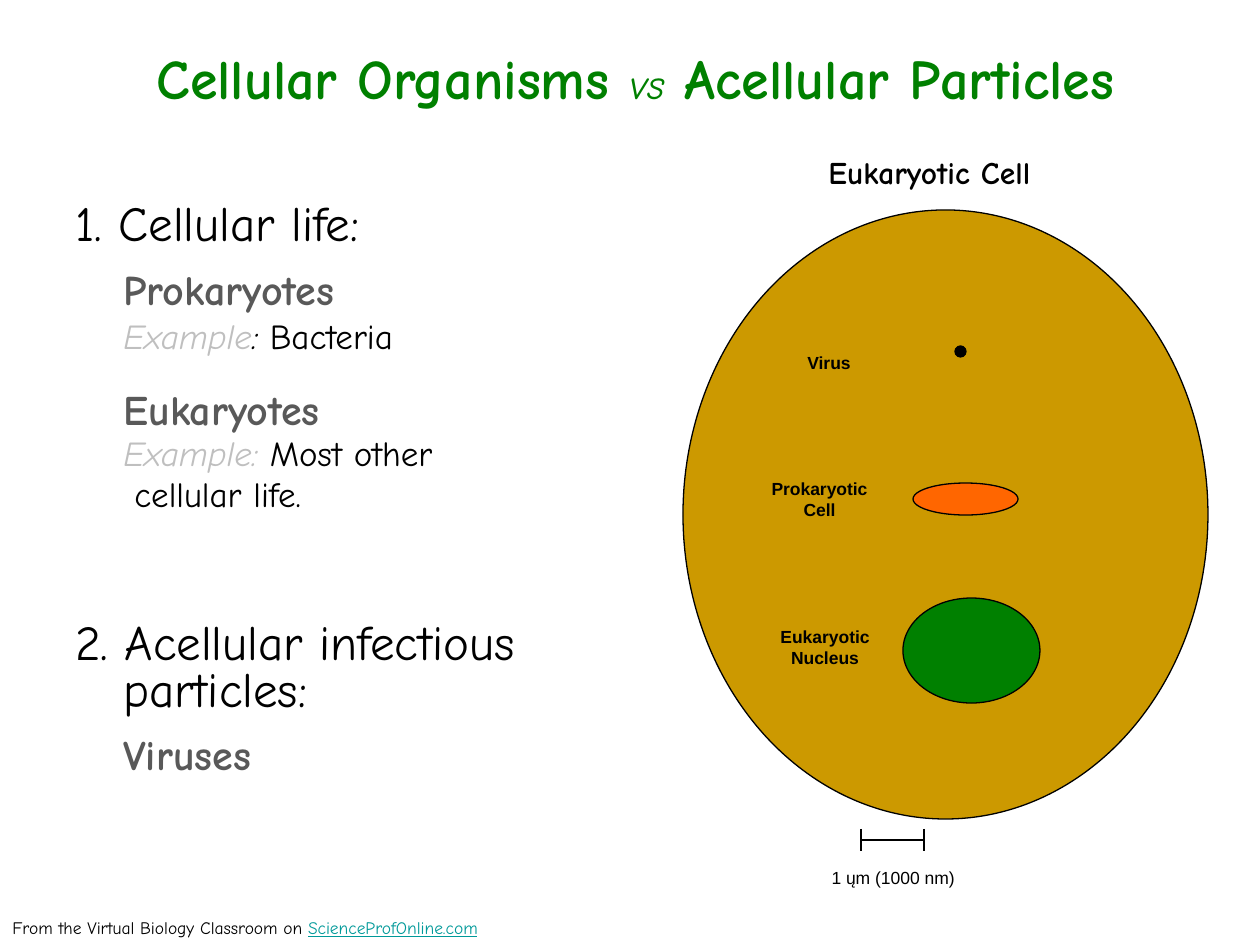
from lxml.etree import SubElement
from pptx import Presentation
from pptx.dml.color import RGBColor
from pptx.enum.shapes import MSO_CONNECTOR, MSO_SHAPE
from pptx.enum.text import MSO_ANCHOR, PP_ALIGN
from pptx.oxml.ns import qn
from pptx.util import Inches, Pt

PX = Inches(1) / 126
BLACK = RGBColor(0, 0, 0)
GREEN = RGBColor(0, 128, 0)
GOLD = RGBColor(204, 153, 0)
ORANGE = RGBColor(255, 102, 0)
GREY = RGBColor(89, 89, 89)
SILVER = RGBColor(191, 191, 191)
TEAL = RGBColor(0, 153, 153)
COMIC, ARIAL = "Comic Neue", "Arial"

HEADING = dict(size=28)
KIND = dict(size=24, bold=True, color=GREY)
EXAMPLE = dict(size=20, italic=True, color=SILVER)
PLAIN = dict(size=20)

TITLE = [
    ("Cellular Organisms ", dict(size=32, bold=True, color=GREEN)),
    ("vs", dict(size=24, italic=True, color=GREEN)),
    (" Acellular Particles", dict(size=32, bold=True, color=GREEN)),
]
# Each outline row: space before in points, left indent, first-line indent, spans
OUTLINE = [
    (0, 48, -48, [("1. Cellular life:", HEADING)]),
    (12.5, 48, 0, [("Prokaryotes", KIND)]),
    (5, 48, 0, [("Example", EXAMPLE), (": ", dict(size=20, italic=True)), ("Bacteria", PLAIN)]),
    (21.5, 48, 0, [("Eukaryotes", KIND)]),
    (3.5, 48, 0, [("Example: ", EXAMPLE), ("Most other", PLAIN)]),
    (4, 59, 0, [("cellular life.", PLAIN)]),
    (62, 48, -48, [("2. Acellular infectious particles:", HEADING)]),
    (12.5, 48, 0, [("Viruses", KIND)]),
]
CELL_PARTS = [
    ((683, 210, 525, 609), GOLD),
    ((903, 598, 137, 105), GREEN),
    ((913, 483, 105, 32), ORANGE),
    ((955, 346, 11, 11), BLACK),
]
LABEL = dict(size=10, bold=True, font=ARIAL)
LABELS = [
    ("Eukaryotic Nucleus", (746, 620, 158, 54), LABEL),
    ("Prokaryotic Cell", (746, 472, 147, 54), LABEL),
    ("Virus", (766, 346, 126, 34), LABEL),
    ("Eukaryotic Cell", (777, 147, 305, 50), dict(size=18, bold=True)),
    ("1 ųm (1000 nm)", (809, 861, 168, 34), dict(size=10, font=ARIAL)),
]
SCALE_LEFT, SCALE_RIGHT, SCALE_Y, TICK = 861, 924, 840, 11
CREDIT = [
    ("From the Virtual Biology Classroom on ", dict(size=10)),
    ("ScienceProfOnline.com", dict(size=10, color=TEAL, underline=True)),
]


def emu(*lengths):
    return [round(length * PX) for length in lengths]


def add_span(para, text, size, font=COMIC, color=BLACK, bold=False, italic=False, underline=False):
    span = para.add_run()
    span.text = text
    span.font.name, span.font.size = font, Pt(size)
    span.font.bold, span.font.italic, span.font.underline = bold, italic, underline
    span.font.color.rgb = color


def add_spans(para, spans, align=PP_ALIGN.LEFT):
    para.alignment = align
    for text, style in spans:
        add_span(para, text, **style)


def add_box(page, area, wrap=True):
    frame = page.shapes.add_textbox(*emu(*area)).text_frame
    frame.word_wrap = wrap
    return frame


def add_title(page):
    title = page.shapes.title
    title.left, title.top, title.width, title.height = emu(42, 38, 1187, 78)
    title.text_frame.vertical_anchor = MSO_ANCHOR.MIDDLE
    add_spans(title.text_frame.paragraphs[0], TITLE, PP_ALIGN.CENTER)


def add_outline(page):
    frame = add_box(page, (63, 198, 620, 680))
    for index, (space, left, first, spans) in enumerate(OUTLINE):
        para = frame.add_paragraph() if index else frame.paragraphs[0]
        para.line_spacing = 0.8
        para.space_before = Pt(space)
        properties = para._p.get_or_add_pPr()
        for name, value in zip(("marL", "indent"), emu(left, first)):
            properties.set(name, str(value))
        add_spans(para, spans)


def add_ellipse(page, area, color):
    ellipse = page.shapes.add_shape(MSO_SHAPE.OVAL, *emu(*area))
    ellipse.shadow.inherit = False
    ellipse.fill.solid()
    ellipse.fill.fore_color.rgb = color
    ellipse.line.color.rgb = BLACK
    ellipse.line.width = Pt(0.75)


def add_line(page, *ends):
    line = page.shapes.add_connector(MSO_CONNECTOR.STRAIGHT, *emu(*ends))
    line.line.color.rgb = BLACK
    line.line.width = Pt(0.75)
    SubElement(line._element.spPr, qn("a:effectLst"))


def main():
    deck = Presentation()
    deck.slide_width, deck.slide_height = Inches(10), Inches(7.5)
    page = deck.slides.add_slide(deck.slide_layouts[5])
    add_title(page)
    add_outline(page)
    for area, color in CELL_PARTS:
        add_ellipse(page, area, color)
    for text, area, style in LABELS:
        add_spans(add_box(page, area).paragraphs[0], [(text, style)], PP_ALIGN.CENTER)
    add_line(page, SCALE_LEFT, SCALE_Y, SCALE_RIGHT, SCALE_Y)
    for x in (SCALE_LEFT, SCALE_RIGHT):
        add_line(page, x, SCALE_Y - TICK, x, SCALE_Y + TICK)
    add_spans(add_box(page, (0, 911, 542, 34), wrap=False).paragraphs[0], CREDIT)
    deck.save("out.pptx")


if __name__ == "__main__":
    main()
